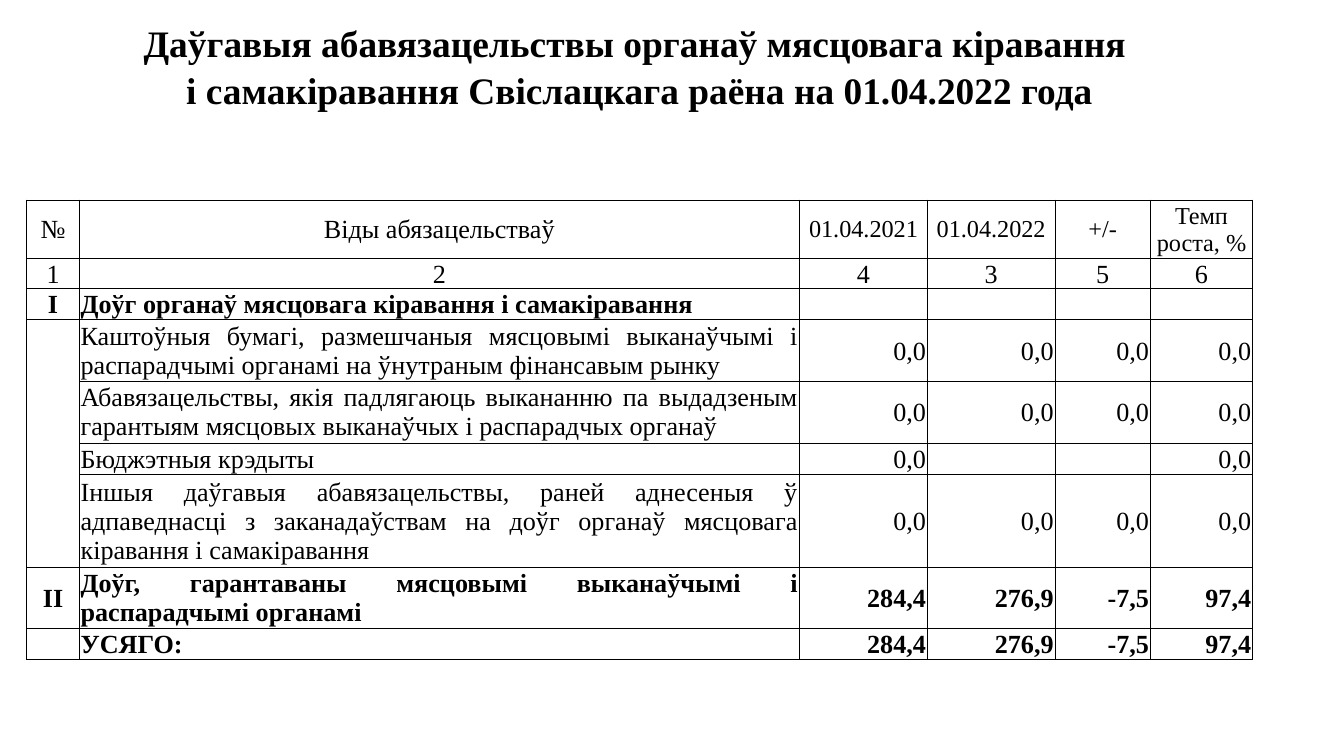
from lxml.etree import SubElement
from pptx import Presentation
from pptx.dml.color import RGBColor
from pptx.enum.text import MSO_ANCHOR as Anchor, PP_ALIGN as Align
from pptx.oxml.ns import qn
from pptx.util import Inches, Pt

BLACK = RGBColor(0, 0, 0)
WHITE = RGBColor(255, 255, 255)
FONT = "Times New Roman"
MARGINS = {
    "margin_left": Inches(0.01),
    "margin_top": Inches(0.01),
    "margin_right": Inches(0.01),
    "margin_bottom": 0,
}
TITLE = (
    "Даўгавыя абавязацельствы органаў мясцовага кіравання \n"
    "і самакіравання Свіслацкага раёна на 01.04.2022 года"
)
COLUMN_WIDTHS = [0.39, 5.36, 0.95, 0.95, 0.71, 0.76]
ROW_HEIGHTS = [0.38, 0.72, 0.38, 0.27, 0.43, 0.23, 0.23, 0.46, 0.46, 0.23, 0.69, 0.46, 0.23]
BLANKS = [""] * 4
ZEROS = ["0,0"] * 4
GUARANTEED = ["284,4", "276,9", "-7,5", "97,4"]
DEBTS = [
    [""],
    [TITLE],
    [""],
    [""],
    ["№", "Віды абязацельстваў", "01.04.2021", "01.04.2022", "+/-", "Темп\nроста, %"],
    ["1", "2", "4", "3", "5", "6"],
    ["I", "Доўг органаў мясцовага кіравання і самакіравання"] + BLANKS,
    ["", "Каштоўныя бумагі, размешчаныя мясцовымі выканаўчымі і распарадчымі "
         "органамі на ўнутраным фінансавым рынку"] + ZEROS,
    ["", "Абавязацельствы, якія падлягаюць выкананню па выдадзеным гарантыям "
         "мясцовых выканаўчых і распарадчых органаў"] + ZEROS,
    ["", "Бюджэтныя крэдыты", "0,0", "", "", "0,0"],
    ["", "Іншыя даўгавыя абавязацельствы, раней аднесеныя ў адпаведнасці з "
         "заканадаўствам на доўг органаў мясцовага кіравання і самакіравання"] + ZEROS,
    ["II", "Доўг, гарантаваны мясцовымі выканаўчымі і распарадчымі органамі"] + GUARANTEED,
    ["", "УСЯГО:"] + GUARANTEED,
]
HEADING_ROW, SPACER_ROW, LAST_BANNER, LABELS, NUMBERING, GUARANTEES = 1, 2, 3, 4, 5, 8
TOTAL = len(DEBTS) - 1
BOLD_ROWS = {HEADING_ROW, 6, 11, TOTAL}
UNNUMBERED = range(7, 11)


def apply_format(target, values):
    """Set every attribute in values on target."""
    for attribute, value in values.items():
        setattr(target, attribute, value)


def write_lines(frame, text, paragraph_format, font_format):
    """Fill a text frame with one formatted paragraph per line."""
    frame.text = text
    for paragraph in frame.paragraphs:
        apply_format(paragraph, paragraph_format)
        for run in paragraph.runs:
            apply_format(run.font, {"name": FONT, **font_format})
            run.font.color.rgb = BLACK
        if not paragraph.runs:
            size = str(int(font_format["size"].pt * 100))
            ending = SubElement(paragraph._p, qn("a:endParaRPr"), sz=size)
            SubElement(ending, qn("a:latin"), typeface=FONT)


def draw_borders(cell, hidden):
    """Outline a cell with thin lines, leaving the hidden sides blank."""
    properties = cell._tc.get_or_add_tcPr()
    for side in "LRTB":
        line = SubElement(properties, qn(f"a:ln{side}"), w=str(Pt(0.5)))
        if side in hidden:
            SubElement(line, qn("a:noFill"))
        else:
            ink = SubElement(line, qn("a:solidFill"))
            SubElement(ink, qn("a:srgbClr"), val=str(BLACK))


def hidden_sides(row, column):
    """Return the sides of a cell that carry no line."""
    if row <= LAST_BANNER:
        return "LRT" if row == LAST_BANNER else "LRTB"
    if column or row not in UNNUMBERED:
        return ""
    return ("T" if row > UNNUMBERED[0] else "") + ("B" if row < UNNUMBERED[-1] else "")


def fill_cell(cell, row, column):
    """Whiten the spacer row and the figures, and clear the other cells."""
    if row == SPACER_ROW or (row > NUMBERING and column > 1):
        cell.fill.solid()
        cell.fill.fore_color.rgb = WHITE
    else:
        cell.fill.background()


def alignment(row, column):
    """Return the alignment of a cell."""
    if row <= NUMBERING or column == 0:
        return Align.CENTER
    if column > 1:
        return Align.RIGHT
    return Align.LEFT if row == TOTAL else Align.JUSTIFY


def anchor(row, column):
    """Return the vertical anchor of a cell."""
    if row in (HEADING_ROW, NUMBERING):
        return Anchor.BOTTOM
    return Anchor.TOP if (row, column) == (GUARANTEES, 1) else Anchor.MIDDLE


def text_size(row, column):
    """Return the text size of a cell."""
    if row == HEADING_ROW:
        return Pt(20)
    return Pt(13 if row == LABELS and column > 1 else 14)


def write_cell(cell, row, column, entry):
    """Write and format one entry of the table."""
    apply_format(cell, {**MARGINS, "vertical_anchor": anchor(row, column)})
    paragraph_format = {"alignment": alignment(row, column)}
    if row == HEADING_ROW:
        paragraph_format["line_spacing"] = 1.15
    write_lines(cell.text_frame, entry, paragraph_format,
                {"size": text_size(row, column), "bold": row in BOLD_ROWS})


def add_debt_table(slide):
    """Add the table of debt obligations with its heading rows."""
    table = slide.shapes.add_table(
        len(DEBTS), len(COLUMN_WIDTHS), Inches(0.2), Inches(-0.26),
        Inches(sum(COLUMN_WIDTHS)), Inches(sum(ROW_HEIGHTS))).table
    apply_format(table, {"first_row": False, "horz_banding": False})
    for column, width in zip(table.columns, COLUMN_WIDTHS):
        column.width = Inches(width)
    for row, height in zip(table.rows, ROW_HEIGHTS):
        row.height = Inches(height)
    for row, entries in enumerate(DEBTS):
        if row <= LAST_BANNER:
            table.cell(row, 0).merge(table.cell(row, len(COLUMN_WIDTHS) - 1))
        for column in range(len(COLUMN_WIDTHS)):
            cell = table.cell(row, column)
            draw_borders(cell, hidden_sides(row, column))
            fill_cell(cell, row, column)
            if column < len(entries):
                write_cell(cell, row, column, entries[column])


def main():
    """Build and save the slide."""
    deck = Presentation()
    apply_format(deck, {"slide_width": Inches(10), "slide_height": Inches(10 * 9 / 16)})
    slide = deck.slides.add_slide(deck.slide_layouts[6])
    add_debt_table(slide)
    deck.save("out.pptx")


if __name__ == "__main__":
    main()
